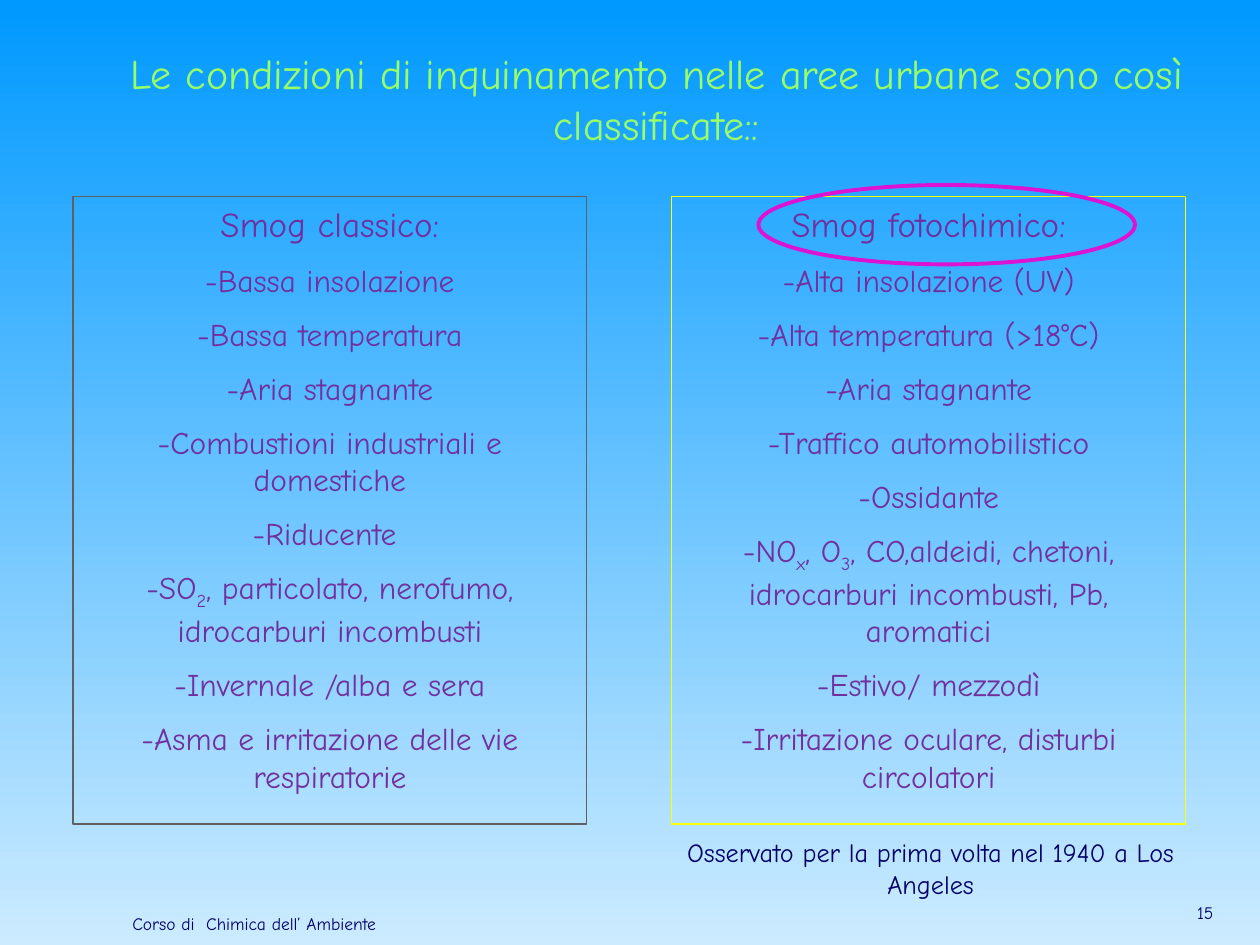
from pptx import Presentation
from pptx import util as u
from pptx.dml.color import RGBColor
from pptx.enum import shapes, text

FONT = "Comic Neue"
SKY = RGBColor(0x00, 0x99, 0xFF)
PALE = RGBColor(0xCC, 0xEB, 0xFF)
LIME = RGBColor(0x99, 0xFF, 0x66)
PURPLE = RGBColor(0x70, 0x30, 0xA0)
NAVY = RGBColor(0x00, 0x00, 0x66)
GREY = RGBColor(0x60, 0x60, 0x60)
YELLOW = RGBColor(0xFF, 0xFF, 0x00)
MAGENTA = RGBColor(0xDD, 0x13, 0xD3)

PANEL_TOP, PANEL_WIDTH, PANEL_HEIGHT = 3.96, 10.36, 12.65

# Underscores enclose subscripts
CLASSIC = [
    "Smog classico:",
    "-Bassa insolazione",
    "-Bassa temperatura",
    "-Aria stagnante",
    "-Combustioni industriali e domestiche",
    "-Riducente ",
    "-SO_2_, particolato, nerofumo, idrocarburi incombusti",
    "-Invernale /alba e sera",
    "-Asma e irritazione delle vie respiratorie",
]
PHOTOCHEMICAL = [
    "Smog fotochimico:",
    "-Alta insolazione (UV)",
    "-Alta temperatura (>18°C)",
    "-Aria stagnante",
    "-Traffico automobilistico",
    "-Ossidante",
    "-NO_x_, O_3_, CO,aldeidi, chetoni, idrocarburi incombusti, Pb, aromatici",
    "-Estivo/ mezzodì",
    "-Irritazione oculare, disturbi circolatori",
]


def write(para, words, size, color, align=text.PP_ALIGN.CENTER, before=0):
    """Fill a paragraph, lowering the parts between underscores."""
    para.alignment = align
    para.space_before = u.Pt(before)
    for index, part in enumerate(words.split("_")):
        span = para.add_run()
        span.text = part
        span.font.name = FONT
        span.font.size = u.Pt(size)
        span.font.color.rgb = color
        if index % 2:
            span.font._element.set("baseline", "-25000")


def add_label(page, words, left, top, width, height, **style):
    box = page.shapes.add_textbox(u.Cm(left), u.Cm(top), u.Cm(width), u.Cm(height))
    box.text_frame.word_wrap = True
    write(box.text_frame.paragraphs[0], words, **style)


def add_outline(page, kind, left, top, width, height, color, weight):
    shape = page.shapes.add_shape(
        kind, u.Cm(left), u.Cm(top), u.Cm(width), u.Cm(height))
    shape.shadow.inherit = False
    shape.fill.background()
    shape.line.color.rgb = color
    shape.line.width = u.Pt(weight)
    return shape


def add_panel(page, left, lines, color):
    panel = add_outline(page, shapes.MSO_SHAPE.RECTANGLE, left, PANEL_TOP,
                        PANEL_WIDTH, PANEL_HEIGHT, color, 0.75)
    frame = panel.text_frame
    frame.word_wrap = True
    frame.vertical_anchor = text.MSO_ANCHOR.TOP
    write(frame.paragraphs[0], lines[0], size=20, color=PURPLE)
    for line in lines[1:]:
        write(frame.add_paragraph(), line, size=18, color=PURPLE, before=9.25)


def paint_background(page):
    fill = page.background.fill
    fill.gradient()
    fill.gradient_angle = 270
    for stop, color, position in zip(fill.gradient_stops, (SKY, PALE), (0, 1)):
        stop.color.rgb = color
        stop.position = position


def main():
    deck = Presentation()
    deck.slide_width, deck.slide_height = u.Cm(25.4), u.Cm(19.05)
    page = deck.slides.add_slide(deck.slide_layouts[6])
    paint_background(page)

    # Title
    add_label(page, "Le condizioni di inquinamento nelle aree urbane sono così classificate::",
              2.34, 0.84, 21.79, 2.31, size=24, color=LIME)

    # The two kinds of smog
    add_panel(page, 1.47, CLASSIC, GREY)
    add_panel(page, 13.54, PHOTOCHEMICAL, YELLOW)

    # Page number and footer
    add_label(page, "15", 23.29, 18.06, 1.42, 0.86, size=10, color=NAVY,
              align=text.PP_ALIGN.RIGHT)
    add_label(page, "Corso di  Chimica dell’ Ambiente ", 1.27, 18.29, 7.82, 0.86,
              size=10, color=NAVY)

    # Highlight and note on photochemical smog
    add_outline(page, shapes.MSO_SHAPE.OVAL, 15.29, 3.73, 7.59, 1.6, MAGENTA, 2.25)
    add_label(page, "Osservato per la prima volta nel 1940 a Los Angeles",
              13.54, 16.74, 10.44, 1.55, size=15, color=NAVY)

    deck.save("out.pptx")


if __name__ == "__main__":
    main()
